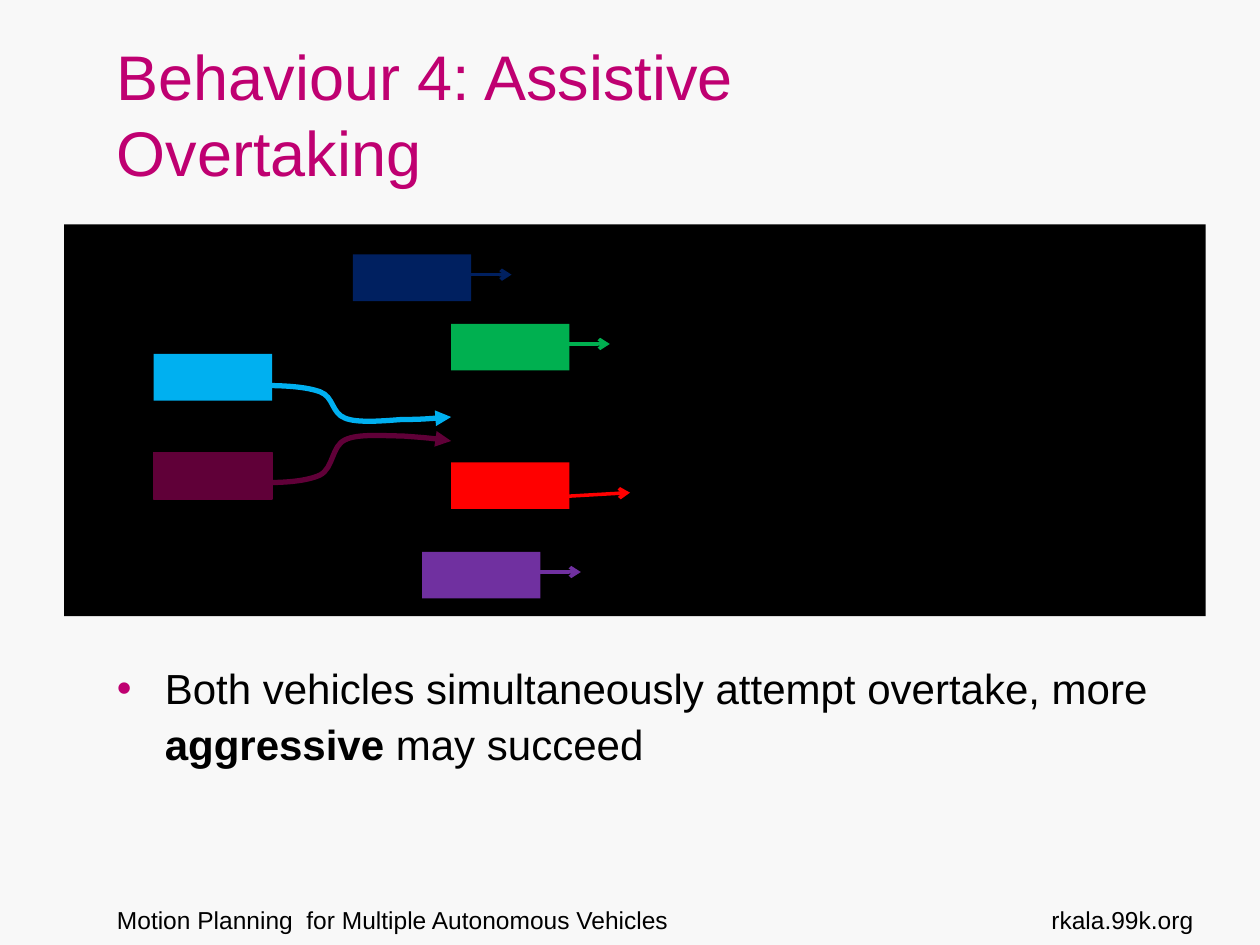
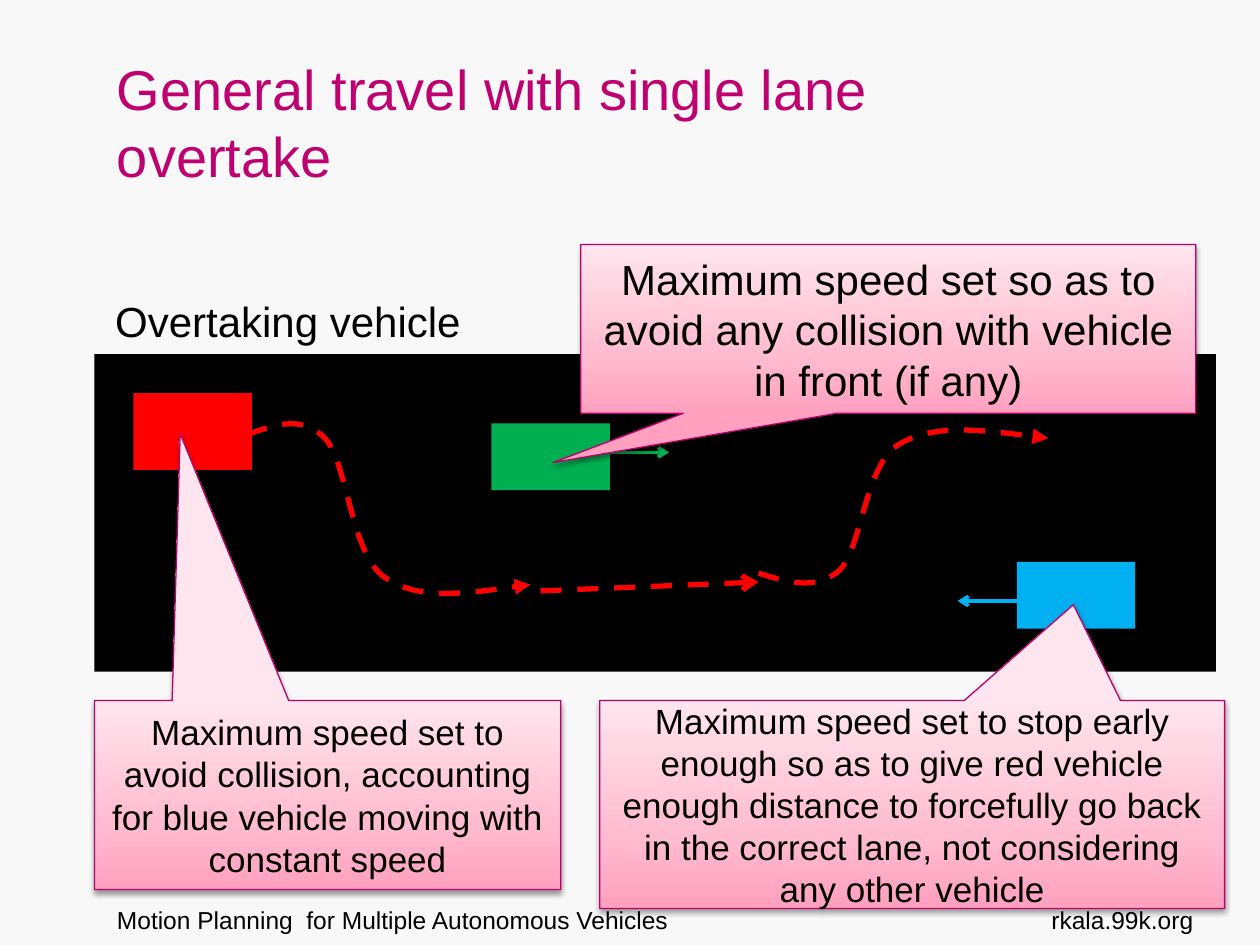
import pptx
import pptx.dml.color
import pptx.enum.dml
import pptx.enum.shapes
import pptx.enum.text
import pptx.oxml.ns
import pptx.util
from copy import deepcopy
from lxml import etree

Inches = pptx.util.Inches
Pt = pptx.util.Pt
qn = pptx.oxml.ns.qn
SHAPES = pptx.enum.shapes.MSO_SHAPE
ALIGN = pptx.enum.text.PP_ALIGN
ANCHOR = pptx.enum.text.MSO_ANCHOR

BLACK, RED, GREEN, BLUE = "000000", "FF0000", "00B050", "00B0F0"
PURPLE, NAVY, PLUM = "7030A0", "002060", "600038"
CALLOUT_STOPS = ((0, "FFA0BF"), (0.35, "FFBCD1"), (1, "FFE5ED"))


def rgb(value):
    return pptx.dml.color.RGBColor.from_string(value)


def box(left, top, width, height):
    return [Inches(length) for length in (left, top, width, height)]


def add_element(parent, tag, **attributes):
    element = etree.SubElement(parent, qn(tag))
    for name, value in attributes.items():
        element.set(name, str(value))
    return element


def write_text(shape, text, size=24, color=BLACK, align=ALIGN.LEFT, anchor=ANCHOR.TOP,
               bold_word=None, bullet_color=None, line_spacing=None):
    frame = shape.text_frame
    frame.word_wrap = True
    frame.vertical_anchor = anchor
    paragraph = frame.paragraphs[0]
    paragraph.alignment = align
    if bullet_color:
        properties = paragraph._p.get_or_add_pPr()
        properties.set("marL", str(Inches(0.38)))
        properties.set("indent", str(-Inches(0.38)))
        add_element(add_element(properties, "a:buClr"), "a:srgbClr", val=bullet_color)
        add_element(properties, "a:buFont", typeface=Style.font)
        add_element(properties, "a:buChar", char="•")
    if line_spacing:
        paragraph.line_spacing = line_spacing
    before, word, after = text.partition(bold_word) if bold_word else (text, "", "")
    for part in filter(None, (before, word, after)):
        run = paragraph.add_run()
        run.text = part
        run.font.name = Style.font
        run.font.size = Pt(size)
        run.font.bold = part == bold_word
        run.font.color.rgb = rgb(color)


def add_shadow(shape, alpha, distance):
    properties = shape._element.spPr
    effects = properties.find(qn("a:effectLst"))
    if effects is None:
        effects = add_element(properties, "a:effectLst")
    shadow = add_element(effects, "a:outerShdw", blurRad=Pt(3.1), dist=Pt(distance),
                         dir=90 * 60000, rotWithShape=0)
    color = add_element(shadow, "a:srgbClr", val=BLACK)
    add_element(color, "a:alpha", val=alpha * 1000)


def style_line(line, color, width, head=None, dashed=False):
    line.color.rgb = rgb(color)
    line.width = Pt(width)
    if dashed:
        line.dash_style = pptx.enum.dml.MSO_LINE.DASH
    if head:
        add_element(line._get_or_add_ln(), "a:tailEnd", type=head)


class Style:
    font = "Arial"
    background = "F8F8F8"
    accent = "BF0071"
    callout_line = "BB006F"

    def __init__(self, presentation):
        self.presentation = presentation
        self.slide = None

    def new_slide(self, title, size):
        self.slide = self.presentation.slides.add_slide(self.presentation.slide_layouts[6])
        fill = self.slide.background.fill
        fill.solid()
        fill.fore_color.rgb = rgb(self.background)
        self.text("Motion Planning  for Multiple Autonomous Vehicles",
                  0.83, 7.13, 6.93, 0.52, size=14)
        self.text("rkala.99k.org", 8.07, 7.13, 1.5, 0.52, size=14, align=ALIGN.RIGHT)
        self.text(title, 0.83, 0.3, 6.77, 1.25, size=size, color=self.accent,
                  anchor=ANCHOR.BOTTOM)

    def text(self, text, left, top, width, height, **text_format):
        shape = self.slide.shapes.add_textbox(*box(left, top, width, height))
        write_text(shape, text, **text_format)

    def rectangle(self, color, left, top, width, height):
        shape = self.slide.shapes.add_shape(SHAPES.RECTANGLE, *box(left, top, width, height))
        shape.shadow.inherit = False
        shape.fill.solid()
        shape.fill.fore_color.rgb = rgb(color)
        shape.line.fill.background()
        return shape

    def arrow(self, color, start, end, width=2, dashed=False):
        connector = self.slide.shapes.add_connector(
            pptx.enum.shapes.MSO_CONNECTOR.STRAIGHT, *box(*start, *end))
        style_line(connector.line, color, width, "arrow", dashed)
        add_element(connector._element.spPr, "a:effectLst")
        return connector

    def curve(self, color, points, dashed=False):
        start, *controls = [(Inches(x), Inches(y)) for x, y in points]
        builder = self.slide.shapes.build_freeform(*start)
        builder.add_line_segments(controls, close=False)
        shape = builder.convert_to_shape()
        shape.shadow.inherit = False
        shape.fill.background()
        segments = list(shape._element.spPr.iter(qn("a:lnTo")))
        outline = segments[0].getparent()
        for first in range(0, len(segments), 3):
            bezier = add_element(outline, "a:cubicBezTo")
            for segment in segments[first:first + 3]:
                bezier.append(segment[0])
                outline.remove(segment)
        style_line(shape.line, color, 3, "triangle", dashed)

    def callout(self, text, left, top, width, height, pointer, size=20):
        shape = self.slide.shapes.add_shape(SHAPES.RECTANGULAR_CALLOUT,
                                            *box(left, top, width, height))
        shape.adjustments[0], shape.adjustments[1] = pointer
        shape.shadow.inherit = False
        shape.fill.gradient()
        shape.fill.gradient_angle = 90
        stop_list = next(shape._element.spPr.iter(qn("a:gsLst")))
        stop_list.append(deepcopy(stop_list[0]))
        for stop, (position, color) in zip(shape.fill.gradient_stops, CALLOUT_STOPS):
            stop.position = position
            stop.color.rgb = rgb(color)
        style_line(shape.line, self.callout_line, 0.75)
        add_shadow(shape, 38, 1.6)
        write_text(shape, text, size=size, align=ALIGN.CENTER, anchor=ANCHOR.MIDDLE)


def build_assistive_overtaking(style):
    style.new_slide("Behaviour 4: Assistive Overtaking", 36)
    style.text("Both vehicles simultaneously attempt overtake, more aggressive may succeed",
               0.83, 5.17, 8.67, 1.33, bold_word="aggressive",
               bullet_color=style.accent, line_spacing=1.1)
    style.rectangle(BLACK, 0.51, 1.78, 9.06, 3.11)
    vehicles = (
        (BLUE, 1.22, 2.81, None),
        (GREEN, 3.58, 2.57, ((4.13, 2.73), (4.84, 2.73))),
        (RED, 3.58, 3.67, ((4.13, 3.96), (5, 3.91))),
        (PURPLE, 3.35, 4.38, ((3.9, 4.54), (4.61, 4.54))),
        (NAVY, 2.8, 2.02, ((3.35, 2.18), (4.06, 2.18))),
        (PLUM, 1.22, 3.59, None),
    )
    for color, left, top, heading in vehicles:
        vehicle = style.rectangle(color, left, top, 0.94, 0.37)
        if heading:
            style.arrow(color, *heading)
        if color == PLUM:
            style_line(vehicle.line, PLUM, 0.75)
    across = (2.09, 2.26, 2.43, 2.54, 2.65, 2.63, 2.74, 2.84, 3.05, 3.19, 3.33, 3.46, 3.58)
    overtakes = (
        (BLUE, (3.06, 3.06, 3.07, 3.11, 3.15, 3.28, 3.32, 3.36, 3.34, 3.33, 3.33, 3.32, 3.31)),
        (PLUM, (3.83, 3.83, 3.82, 3.77, 3.71, 3.54, 3.49, 3.44, 3.46, 3.46, 3.47, 3.48, 3.5)),
    )
    for color, down in overtakes:
        style.curve(color, zip(across, down))


def build_single_lane_overtake(style):
    style.new_slide("General travel with single lane overtake", 32)
    style.rectangle(BLACK, 0.75, 2.81, 8.9, 2.52)
    style.rectangle(GREEN, 3.9, 3.36, 0.94, 0.53)
    style.arrow(GREEN, (4.61, 3.59), (5.31, 3.59))
    style.rectangle(RED, 1.06, 3.12, 0.94, 0.61)
    style.rectangle(BLUE, 8.07, 4.46, 0.94, 0.53)
    style.arrow(BLUE, (8.39, 4.77), (7.6, 4.77))
    style.curve(RED, ((1.96, 3.45), (2.18, 3.37), (2.4, 3.29), (2.58, 3.48), (2.76, 3.67),
                      (2.78, 4.39), (3.05, 4.58), (3.32, 4.77), (3.77, 4.7), (4.21, 4.64)),
                dashed=True)
    style.curve(RED, ((6.02, 4.55), (6.25, 4.62), (6.47, 4.69), (6.66, 4.53), (6.84, 4.36),
                      (6.86, 3.7), (7.13, 3.53), (7.41, 3.36), (7.86, 3.42), (8.32, 3.48)),
                dashed=True)
    passing = style.arrow(RED, (4.29, 4.69), (6.02, 4.62), width=3, dashed=True)
    add_shadow(passing, 35, 1.8)
    style.text("Overtaking vehicle", 0.12, 2.3, 4.33, 0.5, align=ALIGN.CENTER)
    style.callout("Maximum speed set so as to avoid any collision with vehicle in front (if any)",
                  4.61, 1.94, 4.88, 1.34, (-0.545, 0.792), size=24)
    style.callout("Maximum speed set to avoid collision, accounting for blue vehicle moving "
                  "with constant speed", 0.75, 5.56, 3.7, 1.5, (-0.316, -1.911))
    style.callout("Maximum speed set to stop early enough so as to give red vehicle enough "
                  "distance to forcefully go back in the correct lane, not considering any "
                  "other vehicle", 4.76, 5.56, 4.96, 1.65, (0.258, -0.961))


def main():
    presentation = pptx.Presentation()
    presentation.slide_width = Inches(10)
    presentation.slide_height = Inches(7.5)
    style = Style(presentation)
    build_assistive_overtaking(style)
    build_single_lane_overtake(style)
    presentation.save("out.pptx")


if __name__ == "__main__":
    main()
